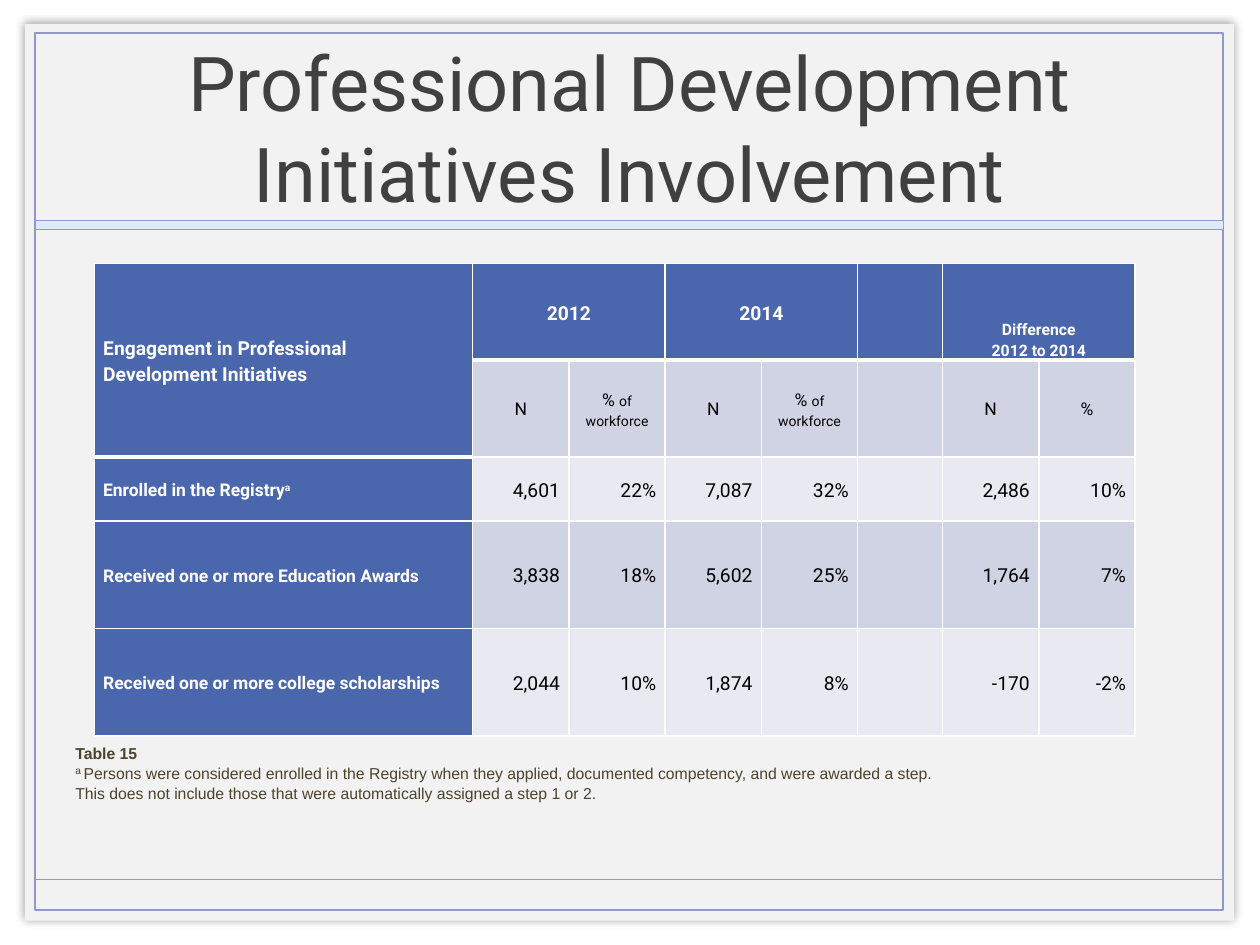
from lxml.etree import SubElement
from pptx import Presentation
from pptx.dml.color import RGBColor
from pptx.enum.shapes import MSO_CONNECTOR, MSO_SHAPE
from pptx.enum.text import MSO_ANCHOR, MSO_AUTO_SIZE, PP_ALIGN
from pptx.oxml.ns import qn
from pptx.util import Cm, Pt

TITLE = "Professional Development Initiatives Involvement"
# A cell is a list of paragraphs, a paragraph a list of (text, size, superscript).
COUNT = [[("N", 10, False)]]
SHARE = [[("% ", 10, False), ("of workforce", 8, False)]]
DIFFERENCE = [[("Difference", 9, False)], [("2012 to 2014", 9, False)]]
TOP_HEADERS = {
    0: [[("Engagement in Professional Development Initiatives", 11, False)]],
    1: [[("2012", 11, False)]],
    3: [[("2014", 11, False)]],
    6: DIFFERENCE,
}
SUB_HEADERS = {1: COUNT, 2: SHARE, 3: COUNT, 4: SHARE, 6: COUNT, 7: [[("%", 10, False)]]}
DATA = [
    ([("Enrolled in the Registry", 10, False), ("a", 10, True)],
     ["4,601", "22%", "7,087", "32%", "", "2,486", "10%"]),
    ([("Received one or more Education Awards", 10, False)],
     ["3,838", "18%", "5,602", "25%", "", "1,764", "7%"]),
    ([("Received one or more college scholarships", 10, False)],
     ["2,044", "10%", "1,874", "8%", "", "-170", "-2%"]),
]
CAPTION = "Table 15"
NOTE_LINES = [
    "Persons were considered enrolled in the Registry when they applied, "
    "documented competency, and were awarded a step. ",
    "This does not include those that were automatically assigned a step 1 or 2.",
]

COLUMN_WIDTHS = [7.63, 1.94, 1.94, 1.94, 1.94, 1.71, 1.94, 1.94]
ROW_HEIGHTS = [1.95, 1.95, 1.29, 2.17, 2.17]
MERGES = [((0, 0), (1, 0)), ((0, 1), (0, 2)), ((0, 3), (0, 4)), ((0, 6), (0, 7))]
HEADER, DARK_BAND, LIGHT_BAND = "4A66AC", "D0D3E3", "E9EAF1"
WHITE, BLACK, FRAME, NOTE = "FFFFFF", "000000", "9297CF", "4A442A"


def color(value):
    return RGBColor.from_string(value)


def add_run(paragraph, text, size, font, text_color, bold=False, superscript=False):
    run = paragraph.add_run()
    run.text = text
    run.font.size = Pt(size)
    run.font.name = font
    run.font.bold = bold
    run.font.color.rgb = color(text_color)
    if superscript:
        run.font._element.set("baseline", "30000")


def add_panel(slide, left, top, width, height, fill=None, line_width=None):
    panel = slide.shapes.add_shape(
        MSO_SHAPE.RECTANGLE, Cm(left), Cm(top), Cm(width), Cm(height))
    panel.shadow.inherit = False
    if fill:
        panel.fill.solid()
        panel.fill.fore_color.rgb = color(fill)
    else:
        panel.fill.background()
    if line_width:
        panel.line.color.rgb = color(FRAME)
        panel.line.width = Pt(line_width)
    else:
        panel.line.fill.background()
    return panel


def add_frame(slide):
    """Draw the page panel with its soft shadow, the border and the rules."""
    page = add_panel(slide, 0.5, 0.48, 24.38, 18.08, fill="F2F2F2")
    effects = page._element.spPr.find(qn("a:effectLst"))
    shadow = SubElement(effects, qn("a:outerShdw"), blurRad=str(Pt(5)), dist="0",
                        dir="0", algn="ctr", rotWithShape="0")
    shadow_color = SubElement(shadow, qn("a:srgbClr"), val=BLACK)
    SubElement(shadow_color, qn("a:alpha"), val="40000")

    left, width = 0.71, 23.95
    add_panel(slide, left, 0.66, width, 17.68, line_width=1)
    rule = slide.shapes.add_connector(
        MSO_CONNECTOR.STRAIGHT, Cm(left), Cm(17.73), Cm(left + width), Cm(17.73))
    rule.line.color.rgb = color(FRAME)
    rule.line.width = Pt(1)
    SubElement(rule._element.spPr, qn("a:effectLst"))
    add_panel(slide, left, 4.45, width, 0.18, fill="DEEAFD", line_width=0.25)


def add_title(slide):
    title = slide.shapes.title
    title.left, title.top, title.width, title.height = Cm(2.49), Cm(0.69), Cm(20.4), Cm(3.73)
    frame = title.text_frame
    frame.auto_size = MSO_AUTO_SIZE.NONE
    frame.vertical_anchor = MSO_ANCHOR.MIDDLE
    frame.margin_top = frame.margin_bottom = 0
    paragraph = frame.paragraphs[0]
    paragraph.alignment = PP_ALIGN.CENTER
    add_run(paragraph, TITLE, 43.2, "Roboto", "404040")
    slide.shapes._spTree.append(title._element)  # in front of the page panel


def set_borders(cell, top, bottom):
    properties = cell._tc.get_or_add_tcPr()
    for side, width in (("L", 1), ("R", 1), ("T", top), ("B", bottom)):
        line = SubElement(properties, qn(f"a:ln{side}"), w=str(Pt(width)))
        fill = SubElement(line, qn("a:solidFill"))
        SubElement(fill, qn("a:srgbClr"), val=WHITE)


def fill_cell(cell, paragraphs, alignment, text_color, bold):
    frame = cell.text_frame
    for index, runs in enumerate(paragraphs):
        paragraph = frame.add_paragraph() if index else frame.paragraphs[0]
        paragraph.alignment = alignment
        paragraph.line_spacing = 1.15
        for text, size, superscript in runs:
            add_run(paragraph, text, size, "Roboto", text_color, bold, superscript)


def table_contents():
    """Return one dict per row, from column number to paragraphs."""
    rows = [TOP_HEADERS, SUB_HEADERS]
    for label, values in DATA:
        row = {0: [label]}
        row.update({column: [[(value, 11, False)]]
                    for column, value in enumerate(values, 1) if value})
        rows.append(row)
    return rows


def add_initiatives_table(slide):
    table = slide.shapes.add_table(
        len(ROW_HEIGHTS), len(COLUMN_WIDTHS), Cm(1.9), Cm(5.31),
        Cm(sum(COLUMN_WIDTHS)), Cm(sum(ROW_HEIGHTS))).table
    table.horz_banding = False
    for column, width in zip(table.columns, COLUMN_WIDTHS):
        column.width = Cm(width)
    for row, height in zip(table.rows, ROW_HEIGHTS):
        row.height = Cm(height)
    for first, last in MERGES:
        table.cell(*first).merge(table.cell(*last))

    for row, contents in enumerate(table_contents()):
        for column in range(len(COLUMN_WIDTHS)):
            cell = table.cell(row, column)
            is_header = row == 0 or column == 0
            header_end = 1 if column == 0 else 0
            set_borders(cell, top=3 if row == header_end + 1 else 1,
                        bottom=3 if row <= header_end else 1)
            cell.fill.solid()
            band = DARK_BAND if row % 2 else LIGHT_BAND
            cell.fill.fore_color.rgb = color(HEADER if is_header else band)
            cell.margin_left = cell.margin_right = Cm(0.18)
            cell.margin_top = cell.margin_bottom = 0
            paragraphs = contents.get(column, [])
            cell.vertical_anchor = (
                MSO_ANCHOR.BOTTOM if paragraphs is DIFFERENCE else MSO_ANCHOR.MIDDLE)
            if column == 0:
                alignment = PP_ALIGN.LEFT
            else:
                alignment = PP_ALIGN.CENTER if row < 2 else PP_ALIGN.RIGHT
            fill_cell(cell, paragraphs, alignment, WHITE if is_header else BLACK, is_header)


def add_table_note(slide):
    frame = slide.shapes.add_textbox(Cm(1.27), Cm(14.86), Cm(23.2), Cm(2.24)).text_frame
    frame.word_wrap = True
    add_run(frame.paragraphs[0], CAPTION, 9, "Arial", NOTE, bold=True)
    paragraph = frame.add_paragraph()
    add_run(paragraph, "a ", 10, "Arial", NOTE, superscript=True)
    for index, line in enumerate(NOTE_LINES):
        if index:
            paragraph.add_line_break()
        add_run(paragraph, line, 9, "Arial", NOTE)


def main():
    presentation = Presentation()
    presentation.slide_width, presentation.slide_height = Cm(25.4), Cm(19.05)
    slide = presentation.slides.add_slide(presentation.slide_layouts[5])
    add_frame(slide)
    add_title(slide)
    add_initiatives_table(slide)
    add_table_note(slide)
    presentation.save("out.pptx")


if __name__ == "__main__":
    main()
